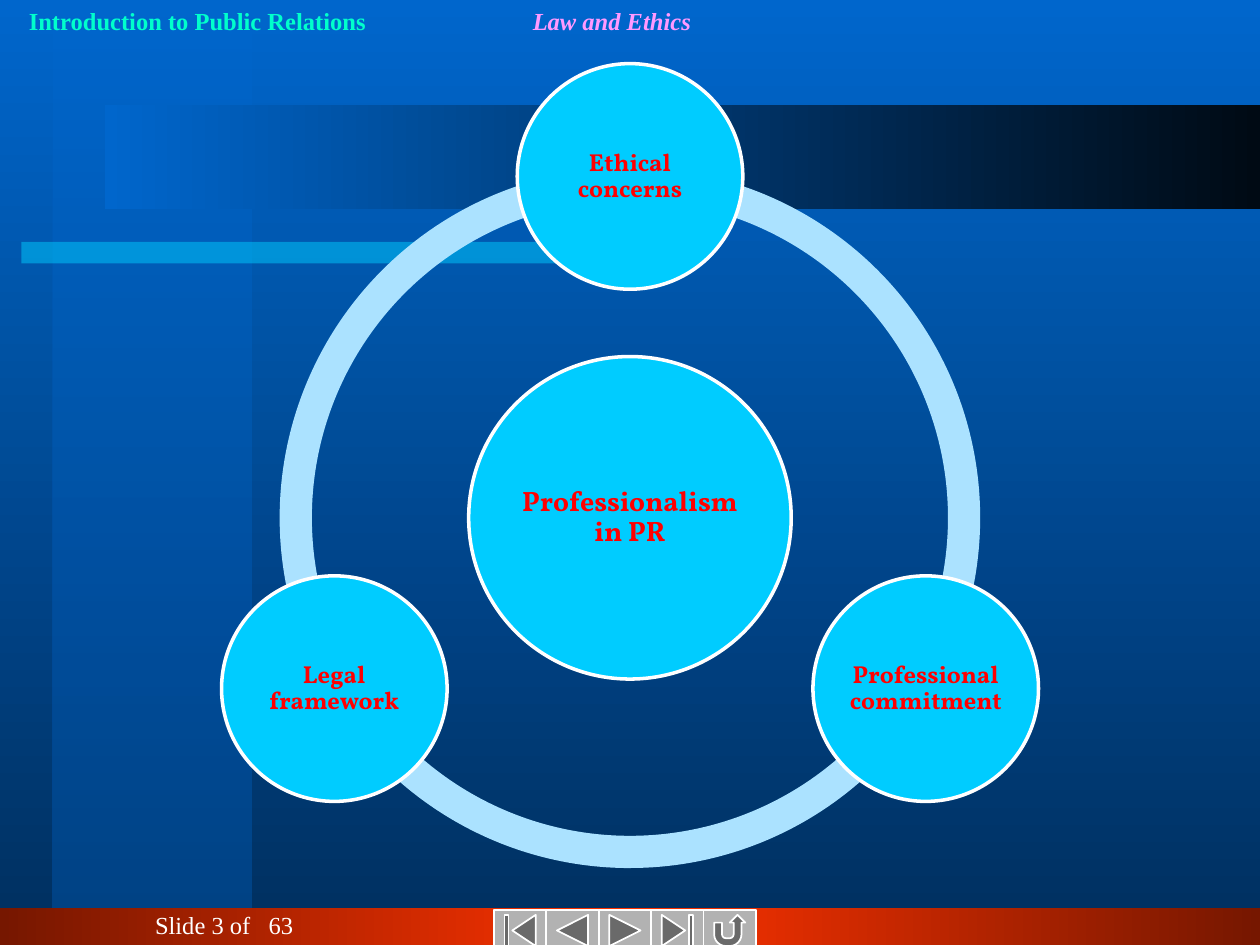
import math
from dataclasses import dataclass

from lxml import etree
from pptx import Presentation
from pptx.dml.color import RGBColor
from pptx.enum import shapes, text
from pptx.oxml import ns
from pptx.util import Inches, Pt

COLORS = {
    "sky": "0066CC", "navy": "002F5E", "column": "0053A6", "black": "000A14",
    "cyan": "00CCFF", "ring": "ABE2FF", "ember": "761700", "orange": "FF3300",
    "button": "B2B2B2", "white": "FFFFFF", "red": "FF0000",
    "mint": "00FFCC", "pink": "FF99FF",
}
SHAPE = shapes.MSO_SHAPE
CENTER_X, CENTER_Y = 5, 4.11
ORBIT = 2.71
RING_SIZE = 5.56
BUTTON_LEFT, BUTTON_STEP = 3.92, 0.416


@dataclass
class Node:
    label: str
    angle: float
    radius: float
    diameter: float
    size: int


@dataclass
class Label:
    text: str
    color: str
    bold: bool = False
    italic: bool = False


NODES = [
    Node("Professionalism in PR", 0, 0, 2.56, 16),
    Node("Ethical concerns", -90, ORBIT, 1.79, 14),
    Node("Professional commitment", 30, ORBIT, 1.79, 14),
    Node("Legal framework", 150, ORBIT, 1.79, 14),
]
ARCS = [(90, 162), (18, 90), (162, 18)]
BUTTONS = [
    SHAPE.ACTION_BUTTON_BEGINNING, SHAPE.ACTION_BUTTON_BACK_OR_PREVIOUS,
    SHAPE.ACTION_BUTTON_FORWARD_OR_NEXT, SHAPE.ACTION_BUTTON_END,
    SHAPE.ACTION_BUTTON_RETURN,
]


def rgb(name: str) -> RGBColor:
    return RGBColor.from_string(COLORS[name])


def set_alpha(fill_element, percent: int) -> None:
    for color in fill_element.iter(ns.qn("a:srgbClr")):
        etree.SubElement(color, ns.qn("a:alpha"), val=str(percent * 1000))


def set_gradient(fill, names: list[str], angle: int) -> None:
    """Spread the named colours evenly; the angle runs counter-clockwise."""
    fill.gradient()
    fill.gradient_angle = angle
    stops = fill.gradient_stops._gsLst
    for stop in list(stops):
        stops.remove(stop)
    for index, name in enumerate(names):
        position = round(100000 * index / (len(names) - 1))
        stop = etree.SubElement(stops, ns.qn("a:gs"), pos=str(position))
        etree.SubElement(stop, ns.qn("a:srgbClr"), val=COLORS[name])


def add_shape(parent, kind, left: float, top: float, width: float, height: float,
              fill: str = "", line: str = "", line_width: float = 1):
    shape = parent.add_shape(kind, Inches(left), Inches(top), Inches(width), Inches(height))
    shape.shadow.inherit = False
    if fill:
        shape.fill.solid()
        shape.fill.fore_color.rgb = rgb(fill)
    if line:
        shape.line.color.rgb = rgb(line)
        shape.line.width = Pt(line_width)
    else:
        shape.line.fill.background()
    return shape


def add_run(paragraph, label: Label, size: int, font_name: str) -> None:
    run = paragraph.add_run()
    run.text = label.text
    font = run.font
    font.name, font.size = font_name, Pt(size)
    font.bold, font.italic = label.bold, label.italic
    font.color.rgb = rgb(label.color)


def add_caption(parent, left: float, top: float, width: float, labels: list[Label]):
    box = parent.add_textbox(Inches(left), Inches(top), Inches(width), Inches(0.33))
    box.text_frame.word_wrap = False
    box.text_frame.auto_size = text.MSO_AUTO_SIZE.SHAPE_TO_FIT_TEXT
    for label in labels:
        add_run(box.text_frame.paragraphs[0], label, 14, "Times New Roman")
    return box


def add_node(parent, node: Node) -> None:
    angle = math.radians(node.angle)
    left = CENTER_X + node.radius * math.cos(angle) - node.diameter / 2
    top = CENTER_Y + node.radius * math.sin(angle) - node.diameter / 2
    circle = add_shape(parent, SHAPE.OVAL, left, top, node.diameter, node.diameter,
                       "cyan", "white", 2)
    frame = circle.text_frame
    frame.word_wrap = True
    frame.vertical_anchor = text.MSO_ANCHOR.MIDDLE
    frame.margin_left = frame.margin_right = Inches(0.02)
    frame.margin_top = frame.margin_bottom = Inches(0.02)
    paragraph = frame.paragraphs[0]
    paragraph.alignment = text.PP_ALIGN.CENTER
    paragraph.line_spacing = 0.9
    add_run(paragraph, Label(node.label, "red", bold=True), node.size, "Vollkorn")


def add_backdrop(slide) -> None:
    set_gradient(slide.background.fill, ["sky", "navy"], 270)
    column = add_shape(slide.shapes, SHAPE.RECTANGLE, 0.42, 0, 1.58, 7.5)
    set_gradient(column.fill, ["sky", "column"], 270)
    set_alpha(column.fill.gradient_stops._gsLst, 50)
    stripe = add_shape(slide.shapes, SHAPE.RECTANGLE, 0.17, 1.92, 5.17, 0.17, "cyan")
    set_alpha(stripe._element.spPr.find(ns.qn("a:solidFill")), 50)
    band = add_shape(slide.shapes, SHAPE.RECTANGLE, 0.83, 0.83, 9.17, 0.83)
    set_gradient(band.fill, ["sky", "black"], 0)


def add_footer(slide) -> None:
    bar = add_shape(slide.shapes, SHAPE.RECTANGLE, 0, 7.21, 10, 0.33)
    set_gradient(bar.fill, ["ember", "orange", "ember"], 0)
    for index, kind in enumerate(BUTTONS):
        add_shape(slide.shapes, kind, BUTTON_LEFT + index * BUTTON_STEP, 7.22,
                  BUTTON_STEP, 0.33, "button", "white")
    counter = add_caption(slide.shapes, 1, 7.17, 1.48, [Label("Slide 3 of   63", "white")])
    counter.text_frame.margin_right = Inches(0.15)
    counter.text_frame.paragraphs[0].alignment = text.PP_ALIGN.RIGHT


def add_cycle(slide) -> None:
    group = slide.shapes.add_group_shape().shapes
    for start, end in ARCS:
        arc = add_shape(group, SHAPE.BLOCK_ARC, CENTER_X - RING_SIZE / 2,
                        CENTER_Y - RING_SIZE / 2, RING_SIZE, RING_SIZE, "ring")
        # Angles are stored in 60000ths of a degree, adjustments in 100000ths.
        arc.adjustments[0] = start * 0.6
        arc.adjustments[1] = end * 0.6
        arc.adjustments[2] = 0.046
    for node in NODES:
        add_node(group, node)


def main() -> None:
    presentation = Presentation()
    presentation.slide_width, presentation.slide_height = Inches(10), Inches(7.5)
    slide = presentation.slides.add_slide(presentation.slide_layouts[6])
    add_backdrop(slide)
    add_caption(slide.shapes, 0.13, 0, 6.45, [
        Label("Introduction to Public Relations\t\t\t", "mint", bold=True),
        Label("Law and Ethics", "pink", bold=True, italic=True),
    ])
    add_footer(slide)
    add_cycle(slide)
    presentation.save("out.pptx")


if __name__ == "__main__":
    main()
